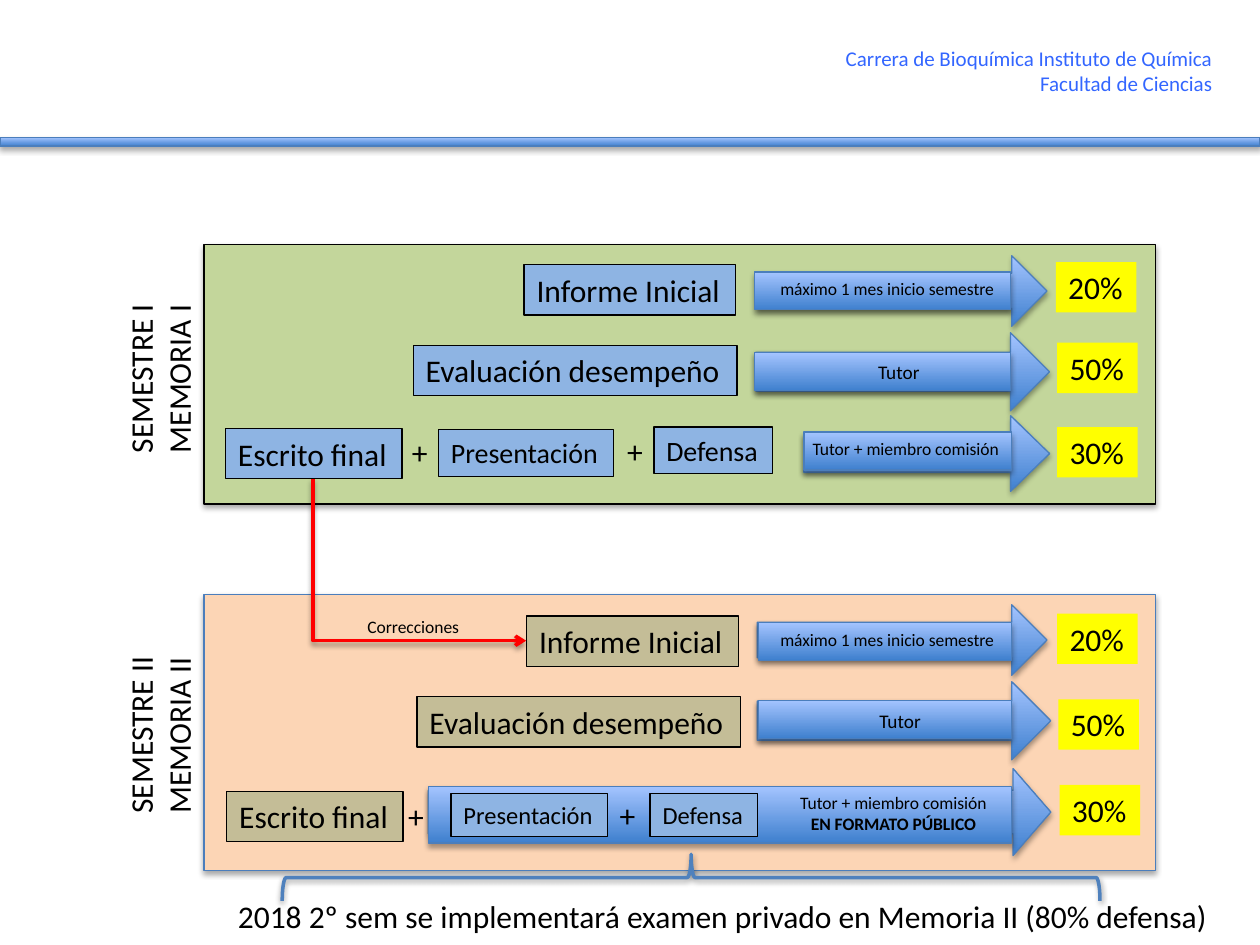
"""Build the slide on the grading scheme of the two thesis semesters."""
from lxml.etree import SubElement
from pptx import Presentation
from pptx.dml.color import RGBColor
from pptx.enum.shapes import MSO_CONNECTOR, MSO_SHAPE as SHAPE
from pptx.enum.text import MSO_AUTO_SIZE, PP_ALIGN as ALIGN
from pptx.oxml.ns import qn
from pptx.util import Inches, Pt

BLACK = RGBColor(0x00, 0x00, 0x00)
HEADER = RGBColor(0x33, 0x66, 0xFF)
DARK = RGBColor(0x3F, 0x80, 0xCE)
LIGHT = RGBColor(0xA4, 0xC4, 0xFF)
EDGE = RGBColor(0x4B, 0x7E, 0xBC)
BRACE = RGBColor(0x4F, 0x81, 0xBD)
GREEN = RGBColor(0xC3, 0xD6, 0x9B)
PEACH = RGBColor(0xFC, 0xD5, 0xB5)
BLUE = RGBColor(0x8E, 0xB4, 0xE3)
TAN = RGBColor(0xC4, 0xBD, 0x97)
YELLOW = RGBColor(0xFF, 0xFF, 0x00)
RED = RGBColor(0xFF, 0x00, 0x00)

FILLED_SHADOW = dict(blur=40000, dist=23000, alpha=35000)
LINE_SHADOW = dict(blur=40000, dist=20000, alpha=38000)

PANELS = [
    ((1.62, 4.72, 7.55, 2.19), PEACH, EDGE),
    ((1.62, 1.94, 7.55, 2.06), GREEN, BLACK),
]
ARROWS = [
    ((6.01, 2.03, 2.3, 0.56), 0.5, (5.99, 2.16, 2.03, 0.3)),
    ((6, 2.64, 2.33, 0.62), 0.5, (5.99, 2.8, 2.03, 0.3)),
    ((6.38, 3.3, 1.95, 0.6), 0.515, (6.38, 3.43, 1.65, 0.3)),
    ((6.01, 4.8, 2.3, 0.56), 0.5, (6.02, 4.94, 2.01, 0.3)),
    ((6.01, 5.41, 2.33, 0.62), 0.5, (6.02, 5.56, 2.01, 0.3)),
    ((3.4, 6.1, 4.94, 0.69), 0.434, (3.4, 6.24, 4.63, 0.45)),
]
STEPS = [
    ("Informe Inicial", (4.16, 2.1, 1.68, 0.4), 18, BLUE),
    ("Evaluación desempeño", (3.28, 2.74, 2.57, 0.4), 18, BLUE),
    ("Escrito final", (1.79, 3.4, 1.4, 0.4), 18, BLUE),
    ("Presentación", (3.48, 3.41, 1.39, 0.37), 16, BLUE),
    ("Defensa", (5.19, 3.39, 0.94, 0.37), 16, BLUE),
    ("Informe Inicial", (4.18, 4.89, 1.68, 0.4), 18, TAN),
    ("Evaluación desempeño", (3.31, 5.53, 2.57, 0.4), 18, TAN),
    ("Escrito final", (1.8, 6.28, 1.4, 0.4), 18, TAN),
    ("Presentación", (3.58, 6.3, 1.24, 0.34), 14, BLUE),
    ("Defensa", (5.16, 6.3, 0.85, 0.34), 14, BLUE),
]
WEIGHTS = [
    ("20%", 8.38, 2.08), ("50%", 8.39, 2.72), ("30%", 8.39, 3.39),
    ("20%", 8.39, 4.87), ("50%", 8.4, 5.55), ("30%", 8.41, 6.23),
]
PLUSES = [(3.17, 3.39), (4.88, 3.38), (3.14, 6.28), (4.82, 6.27)]
SEMESTERS = [
    (["SEMESTRE I", "MEMORIA I"], (0.57, 2.64, 1.4, 0.71)),
    (["SEMESTRE II", "MEMORIA II"], (0.54, 5.47, 1.46, 0.71)),
]
WIDE = dict(align=ALIGN.CENTER, wrap=True)
LABELS = [
    (["máximo 1 mes inicio semestre"], (5.74, 2.16, 2.6, 0.27), 10, WIDE),
    (["Tutor"], (6.87, 2.81, 0.55, 0.29), 11, {}),
    (["Tutor + miembro comisión"], (6.35, 3.43, 1.72, 0.27), 10, {}),
    (["Correcciones"], (2.55, 4.84, 1.46, 0.27), 10, WIDE),
    (["máximo 1 mes inicio semestre"], (5.74, 4.94, 2.6, 0.27), 10, WIDE),
    (["Tutor"], (6.88, 5.58, 0.55, 0.29), 11, {}),
    (["Tutor + miembro comisión", "EN FORMATO PÚBLICO"],
     (6.23, 6.24, 1.72, 0.44), 10, dict(align=ALIGN.CENTER, bold_from=1)),
    (["2018 2º sem se implementará examen privado en Memoria II (80% defensa)"],
     (1.79, 7.07, 8, 0.4), 18, {}),
]


def inches(values):
    return [Inches(v) for v in values]


def add_shadow(sp, blur, dist, alpha):
    effects = SubElement(sp._element.spPr, qn("a:effectLst"))
    shadow = SubElement(effects, qn("a:outerShdw"), blurRad=str(blur),
                        dist=str(dist), dir="5400000", rotWithShape="0")
    color = SubElement(shadow, qn("a:srgbClr"), val=str(BLACK))
    SubElement(color, qn("a:alpha"), val=str(alpha))


def set_line(sp, color, width):
    sp.line.color.rgb = color
    sp.line.width = Pt(width)


def add_block(slide, kind, box, fill=None, edge=EDGE):
    sp = slide.shapes.add_shape(kind, *inches(box))
    if fill is None:
        sp.fill.gradient()
        sp.fill.gradient_angle = 90
        for stop, color in zip(sp.fill.gradient_stops, (DARK, LIGHT)):
            stop.color.rgb = color
    else:
        sp.fill.solid()
        sp.fill.fore_color.rgb = fill
    set_line(sp, edge, 0.75)
    add_shadow(sp, **FILLED_SHADOW)
    return sp


def add_text(slide, lines, box, size=18, color=BLACK, align=ALIGN.LEFT,
             wrap=False, fill=None, edge=None, bold_from=None):
    sp = slide.shapes.add_textbox(*inches(box))
    tf = sp.text_frame
    tf.word_wrap = wrap
    tf.auto_size = MSO_AUTO_SIZE.SHAPE_TO_FIT_TEXT
    if fill is not None:
        sp.fill.solid()
        sp.fill.fore_color.rgb = fill
    if edge is not None:
        set_line(sp, edge, 0.75)
    for i, line in enumerate(lines):
        p = tf.paragraphs[0] if i == 0 else tf.add_paragraph()
        p.alignment = align
        r = p.add_run()
        r.text = line
        bold = bold_from is not None and i >= bold_from
        for name, value in dict(name="Calibri", size=Pt(size), bold=bold).items():
            setattr(r.font, name, value)
        r.font.color.rgb = color
    return sp


def add_correction_arrow(slide):
    cxn = slide.shapes.add_connector(MSO_CONNECTOR.ELBOW, *inches((3.97, 3.6, 2.69, 5.29)))
    props = cxn._element.spPr
    props.find(qn("a:xfrm")).set("rot", "16200000")
    props.find(qn("a:prstGeom")).set("prst", "bentConnector2")
    set_line(cxn, RED, 2)
    SubElement(props.find(qn("a:ln")), qn("a:tailEnd"), type="arrow")
    add_shadow(cxn, **LINE_SHADOW)


def add_brace(slide):
    sp = slide.shapes.add_shape(SHAPE.LEFT_BRACE, *inches((5.3, 3.72, 0.37, 6.49)))
    sp.rotation = 90
    sp.fill.background()
    set_line(sp, BRACE, 2)
    add_shadow(sp, **LINE_SHADOW)


def main():
    prs = Presentation()
    prs.slide_width, prs.slide_height = inches((10, 7.5))
    slide = prs.slides.add_slide(prs.slide_layouts[6])
    add_text(slide, ["Carrera de Bioquímica Instituto de Química", "Facultad de Ciencias"],
             (5.75, 0.31, 3.97, 0.5), 12, HEADER, ALIGN.RIGHT, wrap=True)
    add_block(slide, SHAPE.RECTANGLE, (0, 1.09, 10, 0.07))
    for box, fill, edge in PANELS:
        add_block(slide, SHAPE.RECTANGLE, box, fill, edge)
    for box, head, shaft in ARROWS:
        sp = add_block(slide, SHAPE.RIGHT_ARROW, box)
        sp.adjustments[1] = head
        add_block(slide, SHAPE.RECTANGLE, shaft)
    for name, box, size, fill in STEPS:
        add_text(slide, [name], box, size, fill=fill, edge=BLACK)
    for weight, left, top in WEIGHTS:
        add_text(slide, [weight], (left, top, 0.64, 0.4), fill=YELLOW)
    for left, top in PLUSES:
        add_text(slide, ["+"], (left, top, 0.33, 0.4))
    for lines, box in SEMESTERS:
        add_text(slide, lines, box).rotation = 270
    add_correction_arrow(slide)
    for lines, box, size, options in LABELS:
        add_text(slide, lines, box, size, **options)
    add_brace(slide)
    prs.save("out.pptx")


if __name__ == "__main__":
    main()
